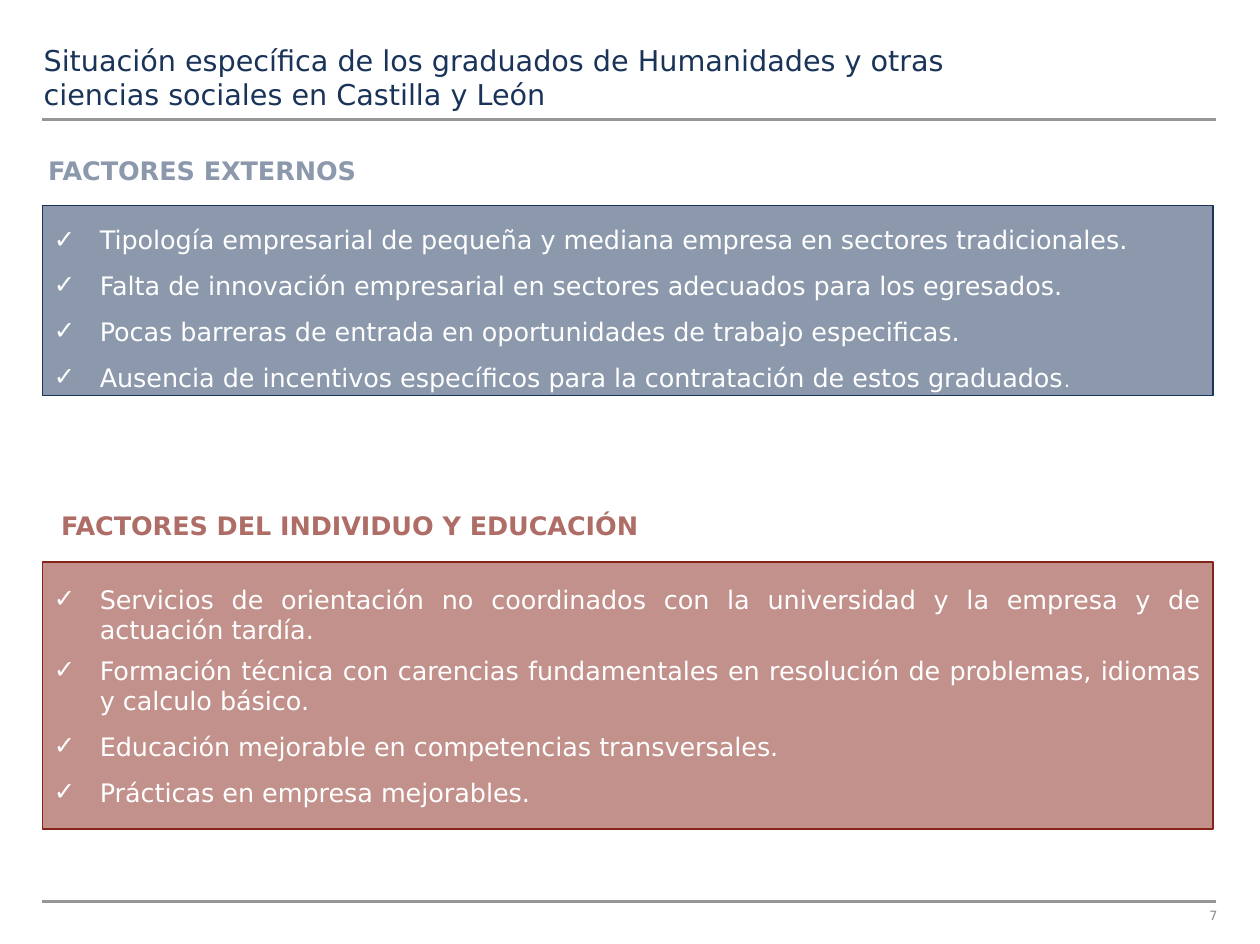
from lxml import etree
from pptx import Presentation
from pptx.dml.color import RGBColor
from pptx.enum.shapes import MSO_CONNECTOR
from pptx.enum.text import MSO_ANCHOR as Anchor, MSO_AUTO_SIZE as AutoSize, PP_ALIGN as Align
from pptx.oxml.ns import qn
from pptx.util import Inches, Pt

WIDTH, HEIGHT = Inches(10.99), Inches(8.23)
FONT = "DejaVu Sans"
NAVY, SLATE, WHITE = "1A3459", "8C99AC", "FFFFFF"
ROSE, PINK, MAROON = "AE6D66", "C2918C", "862419"
RULE_GREY, NUMBER_GREY = "969696", "8C8C8C"
LEFT, RIGHT = 3.37, 96.54
INDENT = Inches(0.4)

# Each item: text, line spacing, points before
EXTERNAL = [
    ("Tipología empresarial de pequeña y mediana empresa en sectores tradicionales.", 1.5, 0),
    ("Falta de innovación empresarial en sectores adecuados para los egresados.", 1.5, 0),
    ("Pocas barreras de entrada en oportunidades de trabajo especificas.", 1.5, 0),
    ("Ausencia de incentivos específicos para la contratación de estos graduados", 1.5, 0),
]
INDIVIDUAL = [
    ("Servicios de orientación no coordinados con la universidad y la empresa "
     "y de actuación tardía.", 1.0, 0),
    ("Formación técnica con carencias fundamentales en resolución de problemas, "
     "idiomas y calculo básico.", 1.0, 6),
    ("Educación mejorable en competencias transversales.", 1.5, 0),
    ("Prácticas en empresa mejorables.", 1.5, 0),
]


def color(hex_code):
    return RGBColor.from_string(hex_code)


def share(left, top, width, height):
    """Turn percentages of the slide into lengths."""
    return [round(part * side / 100)
            for part, side in zip((left, top, width, height), (WIDTH, HEIGHT) * 2)]


def place(shape, area):
    shape.left, shape.top, shape.width, shape.height = share(*area)


def style(para, size, hex_code, align, bold=False):
    para.alignment = align
    font = para.font
    font.name, font.size, font.bold = FONT, Pt(size), bold
    font.color.rgb = color(hex_code)


def set_frame(frame, anchor, margin_x=0, margin_y=0):
    frame.word_wrap = True
    frame.auto_size = AutoSize.NONE
    frame.vertical_anchor = anchor
    frame.margin_left = frame.margin_right = Inches(margin_x)
    frame.margin_top = frame.margin_bottom = Inches(margin_y)


def add_label(page, text, area, size, hex_code, align=Align.LEFT, bold=False, anchor=Anchor.TOP):
    frame = page.shapes.add_textbox(*share(*area)).text_frame
    set_frame(frame, anchor)
    frame.text = text
    style(frame.paragraphs[0], size, hex_code, align, bold)


def add_rule(page, height):
    left, top, right, _ = share(LEFT, height, RIGHT, 0)
    rule = page.shapes.add_connector(MSO_CONNECTOR.STRAIGHT, left, top, right, top)
    rule.line.color.rgb = color(RULE_GREY)
    rule.line.width = Pt(1.5)
    etree.SubElement(rule._element.spPr, qn("a:effectLst"))


def add_check_mark(para):
    props = para._p.get_or_add_pPr()
    props.set("marL", str(INDENT))
    props.set("indent", str(-INDENT))
    etree.SubElement(props, qn("a:buFont"), typeface=FONT)
    etree.SubElement(props, qn("a:buChar"), char="✓")


def fill_title(title, text, area):
    place(title, area)
    set_frame(title.text_frame, Anchor.BOTTOM)
    title.text_frame.text = text
    style(title.text_frame.paragraphs[0], 18, NAVY, Align.LEFT)


def fill_list(body, items, area, fill, outline, align):
    """Format a body placeholder as a filled panel of check-marked items."""
    place(body, area)
    body.fill.solid()
    body.fill.fore_color.rgb = color(fill)
    body.line.color.rgb = color(outline)
    body.line.width = Pt(1)
    frame = body.text_frame
    set_frame(frame, Anchor.MIDDLE, 0.1, 0.05)
    frame.text = "\n".join(text for text, _, _ in items)
    for para, (_, spacing, before) in zip(frame.paragraphs, items):
        add_check_mark(para)
        para.line_spacing = spacing
        para.space_before = Pt(before)
        style(para, 16, WHITE, align)


def main():
    deck = Presentation()
    deck.slide_width, deck.slide_height = WIDTH, HEIGHT
    page = deck.slides.add_slide(deck.slide_layouts.get_by_name("Two Content"))
    title, external, individual = page.placeholders

    fill_title(title, "Situación específica de los graduados de Humanidades y otras "
               "ciencias sociales en Castilla y León", (3.46, 3.16, 80.25, 8.63))
    for height in (12.64, 95.5):
        add_rule(page, height)
    add_label(page, "7", (89.72, 96.23, 6.92, 1.58), 8, NUMBER_GREY, Align.RIGHT,
              anchor=Anchor.MIDDLE)

    add_label(page, "FACTORES EXTERNOS", (3.82, 16.4, 27.93, 3.28), 16, SLATE, bold=True)
    fill_list(external, EXTERNAL, (LEFT, 21.75, 92.9, 20.17), SLATE, NAVY, Align.LEFT)
    full_stop = external.text_frame.paragraphs[-1].add_run()
    full_stop.text = "."
    full_stop.font.size = Pt(12)

    add_label(page, "FACTORES DEL INDIVIDUO Y EDUCACIÓN", (0, 54.07, 50.68, 3.28), 16, ROSE,
              Align.RIGHT, bold=True)
    fill_list(individual, INDIVIDUAL, (LEFT, 59.54, 92.9, 28.31), PINK, MAROON, Align.JUSTIFY)

    deck.save("out.pptx")


if __name__ == "__main__":
    main()
